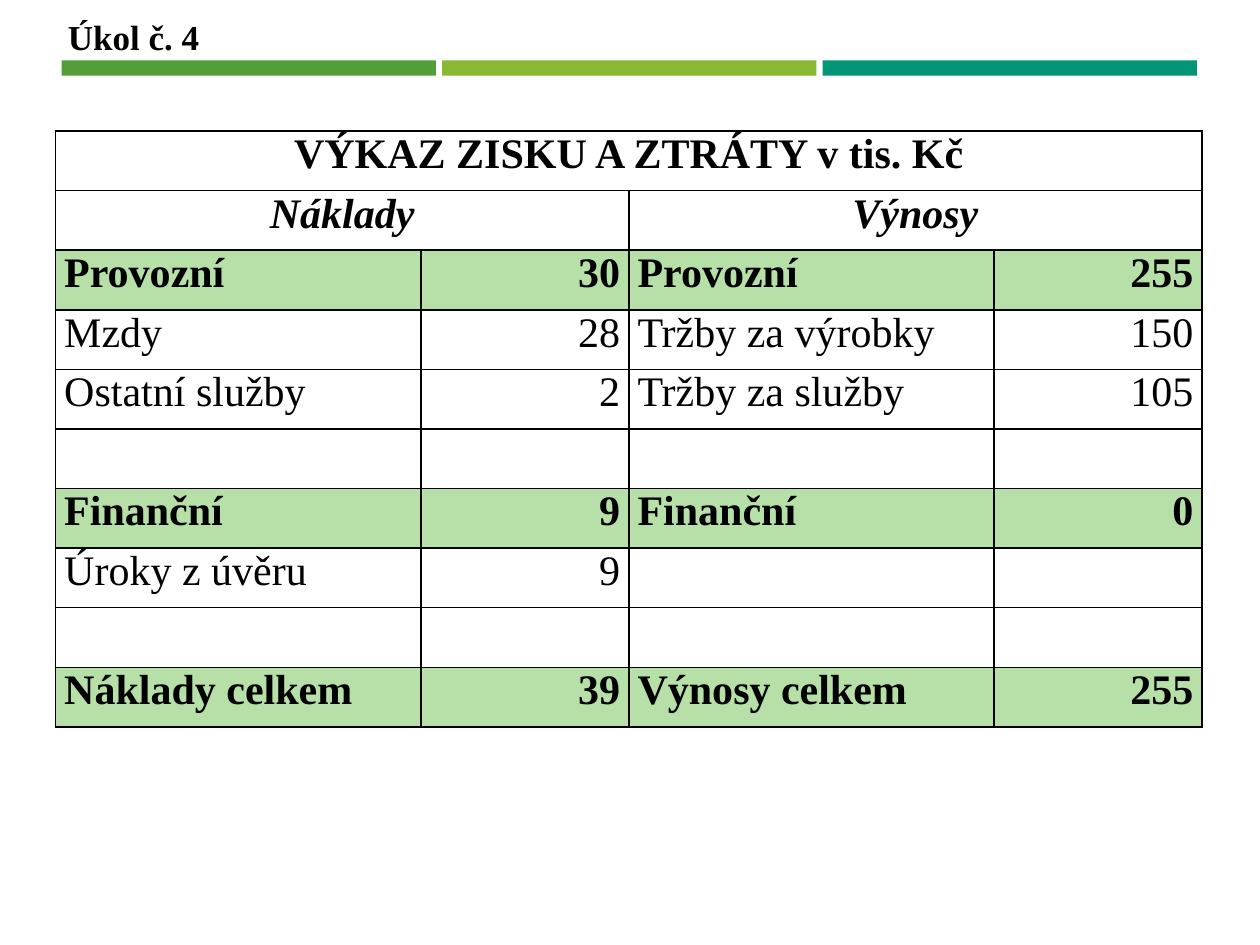
from lxml.etree import SubElement
from pptx import Presentation
from pptx.dml.color import RGBColor
from pptx.enum.shapes import MSO_SHAPE
from pptx.enum.text import MSO_AUTO_SIZE, PP_ALIGN
from pptx.oxml.ns import qn
from pptx.util import Inches, Pt

THEME = {
    "font": "Times New Roman",
    "ink": "000000",
    "band": "B7E0A8",
    "bars": ["549E39", "8AB833", "029676"],
    "title": 20,
    "body": 24,
    "line": 1,
}

TITLE = "Úkol č. 4"
HEAD = "VÝKAZ ZISKU A ZTRÁTY v tis. Kč"
SIDES = ["Náklady", "Výnosy"]
ROWS = [
    ("Provozní", "30", "Provozní", "255"),
    ("Mzdy", "28", "Tržby za výrobky", "150"),
    ("Ostatní služby", "2", "Tržby za služby", "105"),
    ("", "", "", ""),
    ("Finanční", "9", "Finanční", "0"),
    ("Úroky z úvěru", "9", "", ""),
    ("", "", "", ""),
    ("Náklady celkem", "39", "Výnosy celkem", "255"),
]
TOTALS = {0, 4, 7}  # rows of ROWS that carry sums

BAR = {"left": 0.49, "top": 0.48, "width": 2.97, "height": 0.12, "step": 3.02}
GRID = {"left": 0.44, "top": 1.04, "cols": [2.9, 1.65] * 2, "row": 0.473}


def style(para, size, bold=True, italic=False, align=PP_ALIGN.LEFT):
    para.alignment = align
    font = para.font
    font.name, font.size = THEME["font"], Pt(size)
    font.bold, font.italic = bold, italic
    font.color.rgb = RGBColor.from_string(THEME["ink"])


def border(cell):
    props = cell._tc.get_or_add_tcPr()
    for side in ("lnL", "lnR", "lnT", "lnB"):
        line = SubElement(props, qn(f"a:{side}"), w=str(Pt(THEME["line"])))
        fill = SubElement(line, qn("a:solidFill"))
        SubElement(fill, qn("a:srgbClr"), val=THEME["ink"])


def put(cell, text, **look):
    cell.text = text
    style(cell.text_frame.paragraphs[0], THEME["body"], **look)


def add_bars(slide):
    for i, color in enumerate(THEME["bars"]):
        bar = slide.shapes.add_shape(
            MSO_SHAPE.RECTANGLE,
            Inches(BAR["left"] + i * BAR["step"]), Inches(BAR["top"]),
            Inches(BAR["width"]), Inches(BAR["height"]))
        bar.shadow.inherit = False
        bar.fill.solid()
        bar.fill.fore_color.rgb = RGBColor.from_string(color)
        bar.line.fill.background()


def add_title(slide):
    box = slide.shapes.add_textbox(
        Inches(0.44), Inches(0.07), Inches(1.25), Inches(0.44))
    frame = box.text_frame
    frame.word_wrap = False
    frame.auto_size = MSO_AUTO_SIZE.SHAPE_TO_FIT_TEXT
    frame.text = TITLE
    style(frame.paragraphs[0], THEME["title"])


def add_grid(slide):
    cols, count = GRID["cols"], len(ROWS) + 2
    table = slide.shapes.add_table(
        count, len(cols), Inches(GRID["left"]), Inches(GRID["top"]),
        Inches(sum(cols)), Inches(GRID["row"] * count)).table
    table.first_row = table.horz_banding = False
    for col, width in zip(table.columns, cols):
        col.width = Inches(width)
    for row in table.rows:
        row.height = Inches(GRID["row"])
    for cell in table.iter_cells():
        cell.margin_left = cell.margin_right = Inches(0.07)
        cell.margin_top = cell.margin_bottom = 0
        border(cell)
        cell.fill.background()

    table.cell(0, 0).merge(table.cell(0, 3))
    put(table.cell(0, 0), HEAD, align=PP_ALIGN.CENTER)
    for i, side in enumerate(SIDES):
        cell = table.cell(1, 2 * i)
        cell.merge(table.cell(1, 2 * i + 1))
        put(cell, side, italic=True, align=PP_ALIGN.CENTER)
    for r, row in enumerate(ROWS):
        for c, text in enumerate(row):
            cell = table.cell(r + 2, c)
            align = PP_ALIGN.RIGHT if c % 2 else PP_ALIGN.LEFT
            put(cell, text, bold=r in TOTALS, align=align)
            if r in TOTALS:
                cell.fill.solid()
                cell.fill.fore_color.rgb = RGBColor.from_string(THEME["band"])


def main():
    deck = Presentation()
    deck.slide_width, deck.slide_height = Inches(10), Inches(7.5)
    slide = deck.slides.add_slide(deck.slide_layouts[6])
    add_bars(slide)
    add_title(slide)
    add_grid(slide)
    deck.save("out.pptx")


if __name__ == "__main__":
    main()
